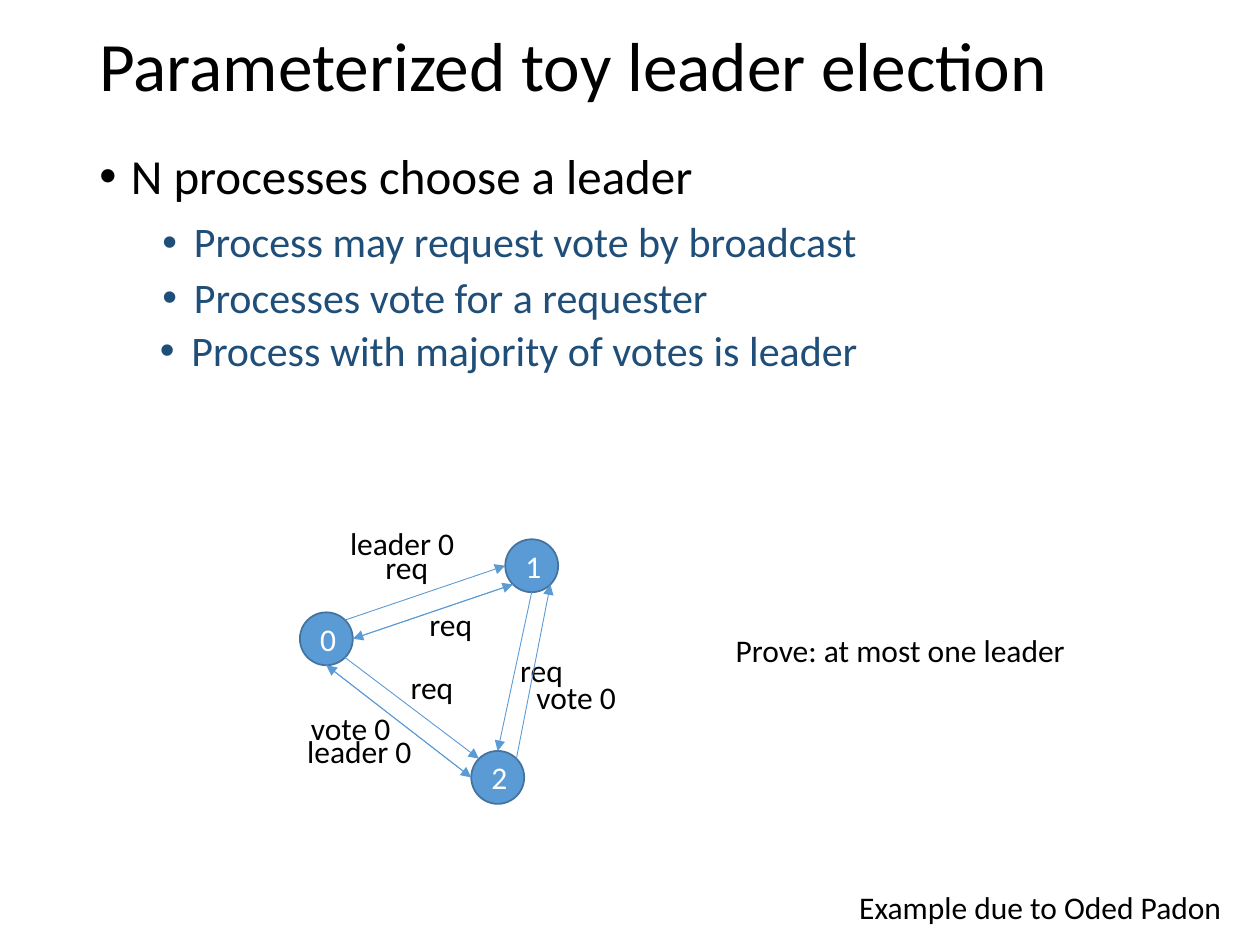
from math import cos, radians, sin

from lxml.etree import SubElement
from pptx import Presentation
from pptx.dml.color import RGBColor
from pptx.enum.shapes import MSO_CONNECTOR, MSO_SHAPE
from pptx.enum.text import MSO_ANCHOR, MSO_AUTO_SIZE, PP_ALIGN
from pptx.oxml.ns import qn
from pptx.util import Inches, Pt

FONT = "Calibri"
COLORS = {"text": "000000", "detail": "1F4E79", "node": "5B9BD5",
          "node_edge": "43739E", "node_text": "FFFFFF"}

TITLE = "Parameterized toy leader election"
MAIN_POINT = "N processes choose a leader"
DETAILS = [  # text, left, top
    ("Process may request vote by broadcast", 0.69, 1.71),
    ("Processes vote for a requester", 0.69, 2.15),
    ("Process with majority of votes is leader", 0.67, 2.57),
]
CREDIT = "Example due to Oded Padon"
GOAL = "Prove: at most one leader"

RADIUS = 0.21
PROCESSES = {"0": (2.59, 5.07), "1": (4.22, 4.49), "2": (3.95, 6.17)}  # centres
ANGLES = {"right": 0, "bottom right": 45, "bottom": 90, "left": 180,
          "top left": 225, "top right": 315}
MESSAGES = [  # sender, side, receiver, side, label, label left, label top
    ("0", "top right", "1", "left", "req", 2.96, 4.30),
    ("0", "bottom right", "2", "top left", "req", 3.16, 5.25),
    ("1", "bottom left", "0", "right", "req", 3.31, 4.75),
    ("1", "bottom", "2", "top", "req", 4.03, 5.12),
    ("2", "left", "0", "bottom", "vote 0", 2.37, 5.58),
    ("2", "top right", "1", "bottom right", "vote 0", 4.16, 5.33),
    ("0", "right", "1", "bottom left", "leader 0", 2.68, 4.11),
    ("0", "bottom", "2", "left", "leader 0", 2.34, 5.76),
]
ANGLES.update({"bottom left": 135, "top": 270})
LABEL_WIDTHS = {"req": 0.55, "vote 0": 0.84, "leader 0": 1.04}


def rgb(name):
    return RGBColor.from_string(COLORS[name])


def style(paragraph, size, color):
    paragraph.font.name = FONT
    paragraph.font.size = Pt(size)
    paragraph.font.color.rgb = rgb(color)


def add_text(slide, text, left, top, width, height=0.4, size=18,
             color="text", wrap=True):
    box = slide.shapes.add_textbox(*map(Inches, (left, top, width, height)))
    frame = box.text_frame
    frame.word_wrap = wrap
    frame.auto_size = MSO_AUTO_SIZE.NONE
    paragraph = frame.paragraphs[0]
    paragraph.text = text
    style(paragraph, size, color)
    return frame


def add_bullet(paragraph, margin, space_before):
    paragraph.line_spacing = 0.9
    paragraph.space_before = Pt(space_before)
    properties = paragraph._p.get_or_add_pPr()
    properties.set("marL", str(Inches(margin)))
    properties.set("indent", str(Inches(-0.25)))
    SubElement(properties, qn("a:buFont"), typeface="Arial")
    SubElement(properties, qn("a:buChar"), char="•")


def add_process(slide, name, center):
    x, y = center
    node = slide.shapes.add_shape(
        MSO_SHAPE.OVAL, Inches(x - RADIUS), Inches(y - RADIUS),
        Inches(2 * RADIUS), Inches(2 * RADIUS))
    node.shadow.inherit = False
    node.fill.solid()
    node.fill.fore_color.rgb = rgb("node")
    node.line.color.rgb = rgb("node_edge")
    node.line.width = Pt(1)
    frame = node.text_frame
    frame.vertical_anchor = MSO_ANCHOR.MIDDLE
    paragraph = frame.paragraphs[0]
    paragraph.text = name
    paragraph.alignment = PP_ALIGN.CENTER
    style(paragraph, 18, "node_text")


def rim_point(process, side):
    x, y = PROCESSES[process]
    angle = radians(ANGLES[side])
    return Inches(x + RADIUS * cos(angle)), Inches(y + RADIUS * sin(angle))


def add_arrow(slide, start, end):
    arrow = slide.shapes.add_connector(MSO_CONNECTOR.STRAIGHT, *start, *end)
    arrow.line.color.rgb = rgb("node")
    arrow.line.width = Pt(0.5)
    SubElement(arrow.line._get_or_add_ln(), qn("a:tailEnd"), type="triangle")
    SubElement(arrow._element.spPr, qn("a:effectLst"))


def main():
    prs = Presentation()
    prs.slide_width, prs.slide_height = Inches(10), Inches(7.5)
    slide = prs.slides.add_slide(prs.slide_layouts[6])

    title = add_text(slide, TITLE, 0.69, 0.18, 8.62, 0.73, size=39.6)
    title.vertical_anchor = MSO_ANCHOR.MIDDLE
    title.paragraphs[0].line_spacing = 0.9

    main_point = add_text(slide, MAIN_POINT, 0.69, 1.16, 8.62, 0.55, size=28)
    add_bullet(main_point.paragraphs[0], 0.25, 10)
    for text, left, top in DETAILS:
        detail = add_text(slide, text, left, top, 8.62, 0.53, 24, "detail")
        detail.paragraphs[0].level = 1
        add_bullet(detail.paragraphs[0], 0.75, 5)

    for name, center in PROCESSES.items():
        add_process(slide, name, center)
    for sender, out_side, receiver, in_side, label, left, top in MESSAGES:
        add_arrow(slide, rim_point(sender, out_side), rim_point(receiver, in_side))
        add_text(slide, label, left, top, LABEL_WIDTHS[label], wrap=False)

    add_text(slide, GOAL, 5.74, 4.96, 2.85, wrap=False)
    add_text(slide, CREDIT, 6.72, 7, 3.28)
    prs.save("out.pptx")


if __name__ == "__main__":
    main()
